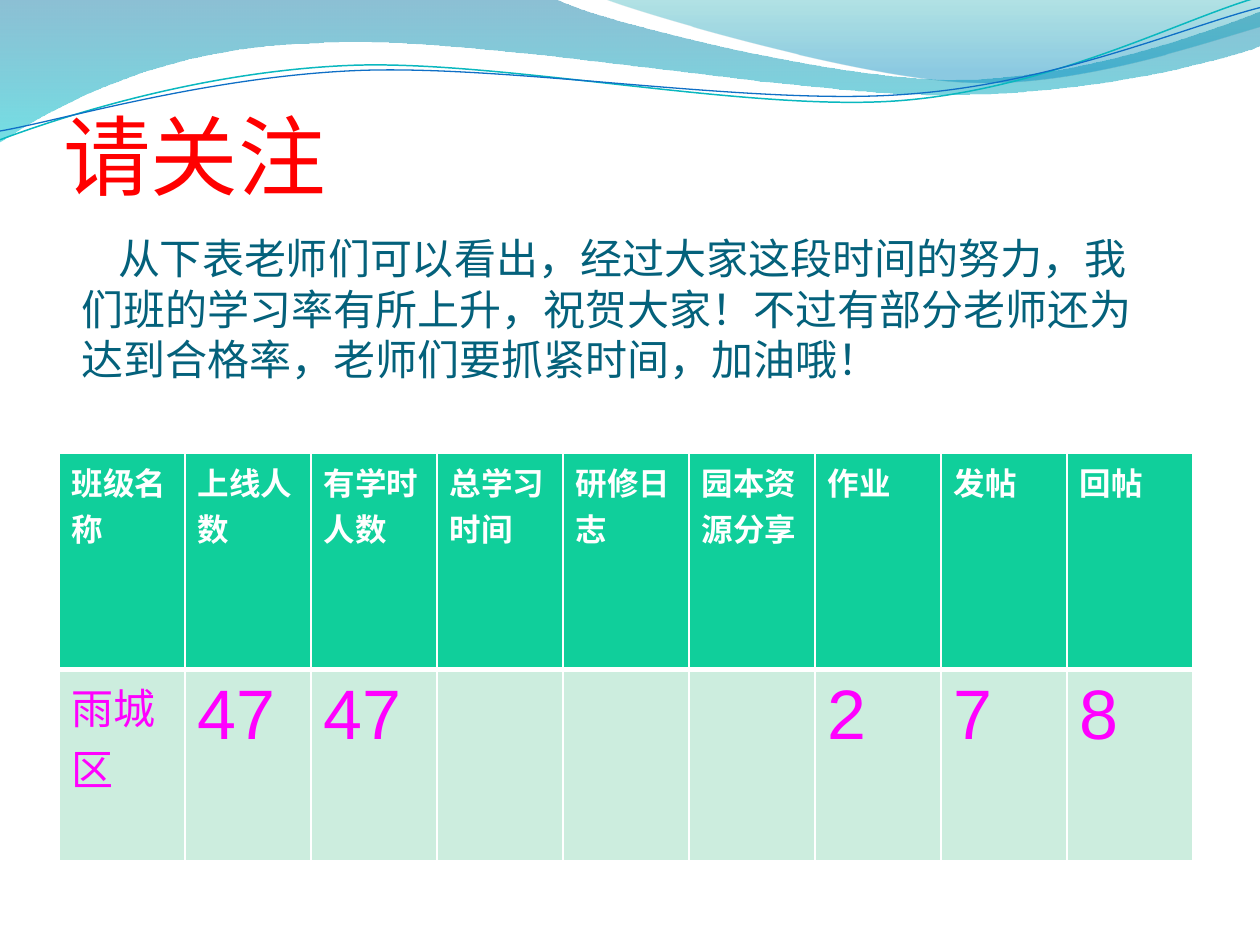
from math import cos, radians, sin

from lxml import etree
from pptx import Presentation
from pptx.dml.color import RGBColor
from pptx.enum.text import MSO_ANCHOR, MSO_AUTO_SIZE, PP_ALIGN
from pptx.oxml.ns import qn
from pptx.util import Cm, Pt

RED = RGBColor(0xFF, 0x00, 0x00)
MAGENTA = RGBColor(0xFF, 0x00, 0xFF)
WHITE = RGBColor(0xFF, 0xFF, 0xFF)
DARK_TEAL = RGBColor(0x04, 0x61, 0x7B)
GREEN = RGBColor(0x10, 0xCF, 0x9B)
PALE_GREEN = RGBColor(0xCC, 0xED, 0xDE)
DEEP_BLUE = RGBColor(0x00, 0x74, 0xA1)
AQUA = RGBColor(0x00, 0xC6, 0xCF)
SEA = RGBColor(0x00, 0xA1, 0xA9)
SKY = RGBColor(0x00, 0x8B, 0xBF)
TURQUOISE = RGBColor(0x0A, 0xB8, 0xBF)
BLUE = RGBColor(0x0F, 0x6F, 0xC6)

INCH = 2.54
TILT = -2.7


def add_wave(s, box, segments, closed, tilt=0):
    left, top, width, height = [Cm(v * INCH) for v in box]
    fb = s.shapes.build_freeform(left, top)
    fb.add_line_segments([(left + width, top), (left + width, top + height),
                          (left, top + height)], close=closed)
    sp = fb.convert_to_shape()
    sp.shadow.inherit = False
    sp.rotation = tilt % 360
    outline = sp._element.spPr.find(".//" + qn("a:path"))
    for child in list(outline):
        outline.remove(child)
    cx, cy = left + width / 2, top + height / 2
    ca, sa = cos(radians(-tilt)), sin(radians(-tilt))
    for i, seg in enumerate(segments):
        tag = "a:moveTo" if i == 0 else "a:lnTo" if len(seg) == 2 else "a:cubicBezTo"
        step = etree.SubElement(outline, qn(tag))
        for x, y in zip(seg[::2], seg[1::2]):
            dx, dy = Cm(x * INCH) - cx, Cm(y * INCH) - cy
            etree.SubElement(step, qn("a:pt"),
                             x=str(round(dx * ca - dy * sa + width / 2)),
                             y=str(round(dx * sa + dy * ca + height / 2)))
    if closed:
        etree.SubElement(outline, qn("a:close"))
    return sp


def format_text(p, font, size, color, bold=False):
    for r in p.runs:
        r.font.name = font
        r.font.size = Pt(size)
        r.font.color.rgb = color
        r.font.bold = bold


prs = Presentation()
prs.slide_width, prs.slide_height = Cm(25.4), Cm(19.05)
s = prs.slides.add_slide(prs.slide_layouts[5])

bands = [
    ((-0.01, -0.01, 10.02, 1.14),
     [(0, 0), (4.4, -0.01), (4.76, 0.17, 6.64, 0.63, 7.58, 0.63),
      (8.53, 0.63, 9.58, 0.26, 10, 0.09), (10.01, 0.36),
      (9.83, 0.44, 8.7, 0.76, 7.46, 0.75), (6.22, 0.75, 3.82, 0.28, 2.57, 0.34),
      (1.29, 0.36, 0.46, 0.83, -0.01, 1.13), (0, 0)],
     [(0, DEEP_BLUE, 45), (1, AQUA, 55)]),
    ((4.79, -0.01, 5.21, 0.7),
     [(4.79, -0.01), (5.09, 0.11, 6.82, 0.62, 7.69, 0.65),
      (8.56, 0.69, 9.61, 0.32, 10, 0.21), (10, 0), (4.79, -0.01)],
     [(0, SEA, 30), (0.8, SKY, 45)]),
]
for box, segments, stops in bands:
    sp = add_wave(s, box, segments, True)
    sp.line.fill.background()
    sp.fill.gradient()
    sp.fill.gradient_angle = 270
    for stop, (position, color, opacity) in zip(sp.fill.gradient_stops, stops):
        stop.position = position
        stop.color.rgb = color
    for clr, (_, _, opacity) in zip(sp._element.spPr.iter(qn("a:srgbClr")), stops):
        etree.SubElement(clr, qn("a:alpha"), val=str(opacity * 1000))

strands = [
    ((-0.02, 0.22, 10.02, 0.71),
     [(0, 1.11), (0.48, 0.93, 1.58, 0.57, 2.77, 0.52),
      (3.95, 0.47, 5.93, 0.89, 7.13, 0.8), (8.33, 0.71, 9.38, 0.15, 9.98, -0.02)],
     TURQUOISE, 0.85),
    ((-0.02, 0.3, 10.03, 0.58),
     [(0, 1.04), (0.47, 0.96, 1.64, 0.61, 2.83, 0.56),
      (4.03, 0.51, 5.97, 0.84, 7.17, 0.75), (8.36, 0.67, 9.41, 0.21, 10, 0.06)],
     BLUE, 0.75),
]
for box, segments, color, width in strands:
    sp = add_wave(s, box, segments, False, TILT)
    sp.fill.background()
    sp.line.color.rgb = color
    sp.line.width = Pt(width)

title = s.shapes.title
title.left, title.top, title.width, title.height = Cm(1.27), Cm(0.79), Cm(22.86), Cm(3.38)
tf = title.text_frame
tf.text = "请关注"
tf.vertical_anchor = MSO_ANCHOR.BOTTOM
tf.margin_left = tf.margin_right = tf.margin_bottom = 0
tf.margin_top = Cm(0.13)
p = tf.paragraphs[0]
p.alignment = PP_ALIGN.LEFT
format_text(p, "Calibri", 50, RED)

headers = ["班级名称", "上线人数", "有学时人数", "总学习时间", "研修日志",
           "园本资源分享", "作业", "发帖", "回帖"]
values = ["雨城区", "47", "47", "", "", "", "2", "7", "8"]
table = s.shapes.add_table(2, len(headers), Cm(1.19), Cm(9.13), Cm(22.86), Cm(8.23)).table
for col in table.columns:
    col.width = Cm(2.54)
table.rows[0].height, table.rows[1].height = Cm(4.37), Cm(3.86)
for i, row in enumerate([headers, values]):
    widths = {"a:lnL": 1, "a:lnR": 1, "a:lnT": 3 if i else 1, "a:lnB": 1 if i else 3}
    for j, text in enumerate(row):
        cell = table.cell(i, j)
        cell.text = text
        size = 18 if i == 0 else 24 if j == 0 else 40
        format_text(cell.text_frame.paragraphs[0], "Arial", size,
                    MAGENTA if i else WHITE, i == 0)
        tcPr = cell._tc.get_or_add_tcPr()
        for tag, width in widths.items():
            ln = etree.SubElement(tcPr, qn(tag), w=str(Pt(width)))
            fill = etree.SubElement(ln, qn("a:solidFill"))
            etree.SubElement(fill, qn("a:srgbClr"), val=str(WHITE))
        cell.fill.solid()
        cell.fill.fore_color.rgb = PALE_GREEN if i else GREEN

tb = s.shapes.add_textbox(Cm(1.4), Cm(4.57), Cm(22.02), Cm(3.33))
tf = tb.text_frame
tf.word_wrap = True
tf.auto_size = MSO_AUTO_SIZE.SHAPE_TO_FIT_TEXT
tf.text = ("从下表老师们可以看出，经过大家这段时间的努力，我们班的学习率有所上升，"
           "祝贺大家！不过有部分老师还为达到合格率，老师们要抓紧时间，加油哦！")
p = tf.paragraphs[0]
p._p.get_or_add_pPr().set("indent", str(Cm(0.73)))
format_text(p, "Arial", 24, DARK_TEAL)

prs.save("out.pptx")
